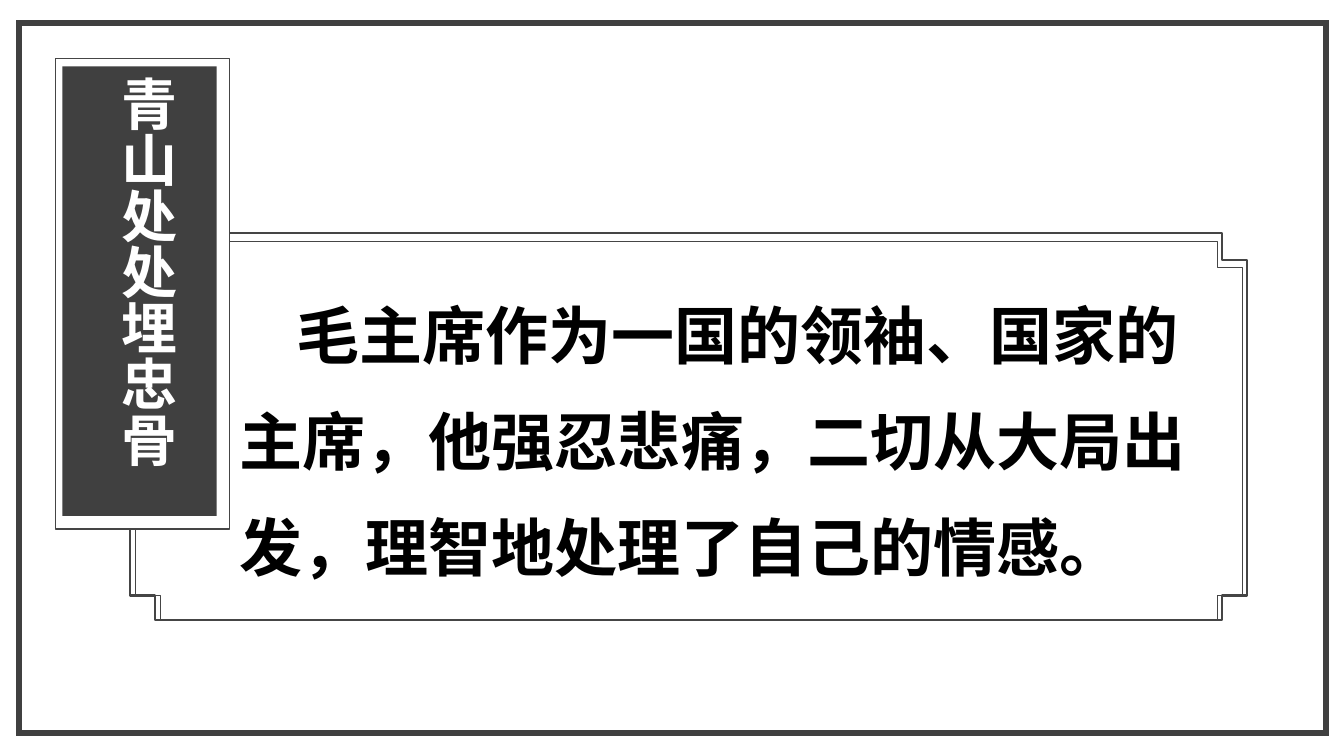
from pptx import Presentation
from pptx.dml.color import RGBColor
from pptx.enum import shapes, text
from pptx.oxml import ns
from pptx.util import Inches, Pt
from lxml import etree

FONT = "Noto Sans CJK SC"
DARK, EDGE, WHITE, BLACK = "404040", "454545", "FFFFFF", "000000"


def paint(fmt, color):
    fmt.solid()
    fmt.fore_color.rgb = RGBColor.from_string(color)


def style(shape, fill=None, line=None, width=1):
    shape.shadow.inherit = False
    if fill:
        paint(shape.fill, fill)
    else:
        shape.fill.background()
    if line:
        paint(shape.line.fill, line)
        shape.line.width = Pt(width)
    else:
        shape.line.fill.background()


def add_box(slide, kind, box, fill, line=None):
    shape = slide.shapes.add_shape(kind, *map(Inches, box))
    style(shape, fill, line)
    return shape


def add_plaque(slide, left, top, right, bottom, width, upper, lower):
    """Outline with square notches cut into its four corners."""
    side = 0.25
    inner_l, inner_r = left + side, right - side
    high, low = top + upper, bottom - lower
    points = [(inner_l, top), (inner_r, top), (inner_r, high), (right, high),
              (right, low), (inner_r, low), (inner_r, bottom),
              (inner_l, bottom), (inner_l, low), (left, low),
              (left, high), (inner_l, high)]
    points = [(Inches(x), Inches(y)) for x, y in points]
    pen = slide.shapes.build_freeform(*points[0])
    pen.add_line_segments(points[1:], close=True)
    style(pen.convert_to_shape(), line=EDGE, width=width)


def add_text(slide, box, words, size, color):
    frame = slide.shapes.add_textbox(*map(Inches, box)).text_frame
    frame.word_wrap = True
    frame.auto_size = text.MSO_AUTO_SIZE.SHAPE_TO_FIT_TEXT
    frame.text = words
    para = frame.paragraphs[0]
    font = para.runs[0].font
    font.name, font.size, font.bold = FONT, Pt(size), True
    paint(font.fill, color)
    # East Asian typeface
    east = etree.SubElement(para.runs[0]._r.get_or_add_rPr(), ns.qn("a:ea"))
    east.set("typeface", FONT)
    return frame, para


def main():
    deck = Presentation()
    deck.slide_width, deck.slide_height = Inches(13.33), Inches(7.5)
    slide = deck.slides.add_slide(deck.slide_layouts[6])
    kind = shapes.MSO_SHAPE

    # Outer frame
    border = add_box(slide, kind.FRAME, (0.16, 0.2, 13.02, 7.1), DARK)
    border.adjustments[0] = 0.008

    # Body text with an indented first line
    _, body = add_text(
        slide, (2.28, 2.59, 9.8, 3.28),
        "毛主席作为一国的领袖、国家的主席，他强忍悲痛，二切从大局出发，理智地处理了自己的情感。",
        45, BLACK)
    body.line_spacing = 1.4
    body._p.get_or_add_pPr().set("indent", str(Inches(0.56)))

    # Double plaque outline
    add_plaque(slide, 1.29, 2.31, 12.37, 6.15, 1.75, 0.27, 0.24)
    add_plaque(slide, 1.34, 2.39, 12.32, 6.15, 0.5, 0.26, 0.24)

    # Title panel with vertical text
    add_box(slide, kind.RECTANGLE, (0.55, 0.58, 1.73, 4.67), WHITE, EDGE)
    add_box(slide, kind.RECTANGLE, (0.62, 0.66, 1.53, 4.46), DARK)
    frame, title = add_text(slide, (0.98, 0.66, 0.87, 4.46),
                            "青山处处埋忠骨", 40, WHITE)
    frame._txBody.bodyPr.set("vert", "eaVert")
    title.alignment = text.PP_ALIGN.CENTER

    deck.save("out.pptx")


if __name__ == "__main__":
    main()
